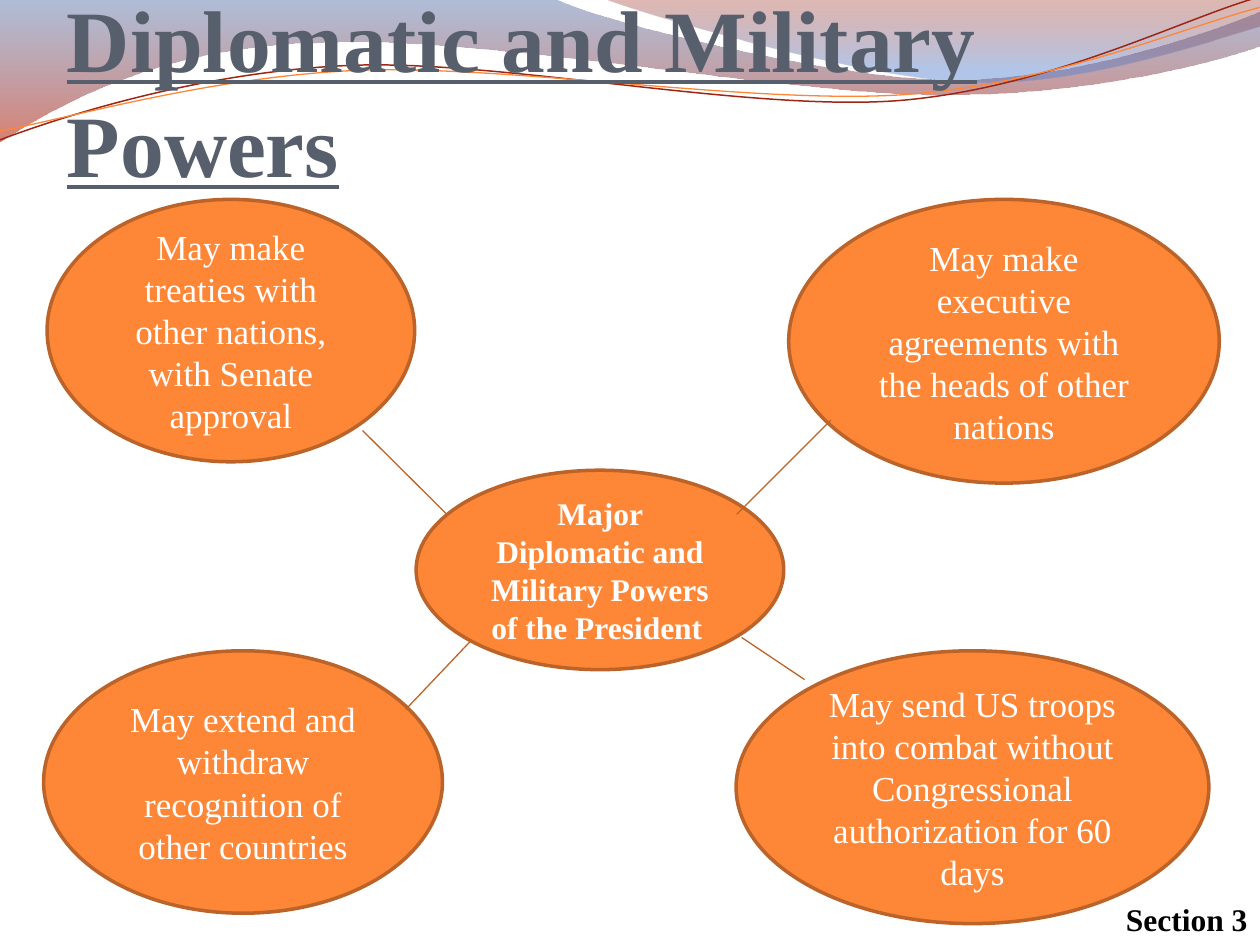
import pptx
import pptx.util
import pptx.dml.color
import pptx.enum.shapes
import pptx.enum.text
from lxml import etree

Cm = pptx.util.Cm
Pt = pptx.util.Pt
Align = pptx.enum.text.PP_ALIGN
Anchor = pptx.enum.text.MSO_ANCHOR
tag = pptx.oxml.ns.qn
FONT = "Times New Roman"
HUES = {
    "orange": "FE8637", "edge": "BC6329", "link": "BE6326",
    "slate": "575F6D", "white": "FFFFFF", "black": "000000",
    "blue": "4F6EA8", "red": "B61A00", "brick": "951500",
    "sky": "5681D1", "rust": "9E2713",
}
WAVES = [
    ([(0, -0.03), (11.18, -0.03),
      (12.09, 0.43, 16.87, 1.6, 19.25, 1.6),
      (21.67, 1.6, 24.33, 0.66, 25.4, 0.23), (25.43, 0.91),
      (24.97, 1.12, 22.1, 1.93, 18.95, 1.91),
      (15.8, 1.91, 9.7, 0.71, 6.53, 0.86),
      (3.28, 0.89, 1.17, 2.11, -0.03, 2.87), (0, -0.03)],
     [(0, "blue", 45), (1, "red", 55)]),
    ([(12.17, -0.03),
      (12.93, 0.28, 17.32, 1.57, 19.53, 1.65),
      (21.74, 1.75, 24.41, 0.81, 25.4, 0.53), (25.4, 0), (12.17, -0.03)],
     [(0, "brick", 30), (0.8, "sky", 45)]),
]
STRANDS = [
    ([(0, 2.82),
      (1.22, 2.36, 4.01, 1.45, 7.04, 1.32),
      (10.03, 1.19, 15.06, 2.26, 18.11, 2.03),
      (21.16, 1.78, 23.83, 0.38, 25.35, -0.05)], "rust", 0.85),
    ([(0, 2.64),
      (1.19, 2.44, 4.17, 1.55, 7.19, 1.42),
      (10.24, 1.3, 15.16, 2.11, 18.21, 1.91),
      (21.23, 1.7, 23.9, 0.53, 25.4, 0.15)], "orange", 0.75),
]
POWERS = [
    ((0.95, 4.02, 7.41, 5.29),
     "May make treaties with other nations, with Senate approval"),
    ((0.88, 13.12, 8.04, 5.29),
     "May extend and withdraw recognition of other countries"),
    ((15.9, 4.02, 8.68, 5.72),
     "May make executive agreements with the heads of other nations"),
    ((14.84, 13.12, 9.53, 5.5),
     "May send US troops into combat without Congressional authorization for 60 days"),
]
HUB = (8.39, 9.48, 7.41, 4.02)
LINKS = [
    (7.31, 8.68, 9.01, 10.37), (8.18, 14.3, 9.48, 12.93),
    (14.95, 12.85, 16.22, 13.7), (14.85, 10.37, 16.75, 8.47),
]


def hue(name):
    return pptx.dml.color.RGBColor.from_string(HUES[name])


def write(frame, text, size=20, color="white", bold=False, under=None,
          align=Align.CENTER, anchor=Anchor.MIDDLE, tail=None):
    frame.word_wrap = True
    frame.vertical_anchor = anchor
    line = frame.paragraphs[0]
    line.alignment = align
    parts = [(text, size)] + ([(" ", tail)] if tail else [])
    for words, points in parts:
        run = line.add_run()
        run.text = words
        font = run.font
        font.name, font.size, font.bold, font.underline = FONT, Pt(points), bold, under
        font.color.rgb = hue(color)


def bend(shape, steps):
    trail = next(shape._element.iter(tag("a:path")))
    nodes = iter(trail.findall(tag("a:lnTo")))
    for step in steps[1:]:
        node = next(nodes)
        if len(step) == 6:
            node.tag = tag("a:cubicBezTo")
            for other in (next(nodes), next(nodes)):
                node.append(other[0])
                trail.remove(other)


def curve(slide, box, steps, close=False):
    spots = [(Cm(box[0] + step[i]), Cm(box[1] + step[i + 1]))
             for step in steps for i in range(0, len(step), 2)]
    maker = slide.shapes.build_freeform(*spots[0])
    maker.add_line_segments(spots[1:], close=close)
    shape = maker.convert_to_shape()
    shape.shadow.inherit = False
    bend(shape, steps)
    return shape


def fade(shape, stops):
    shape.line.fill.background()
    shape.fill.gradient()
    shape.fill.gradient_angle = 270
    for stop, (place, name, alpha) in zip(shape.fill.gradient_stops, stops):
        stop.position = place
        stop.color.rgb = hue(name)
    tints = shape._element.spPr.iter(tag("a:srgbClr"))
    for tint, (place, name, alpha) in zip(tints, stops):
        etree.SubElement(tint, tag("a:alpha"), val=str(alpha * 1000))


def banner(slide, box):
    for steps, stops in WAVES:
        fade(curve(slide, box, steps, True), stops)
    for steps, name, width in STRANDS:
        shape = curve(slide, box, steps)
        shape.fill.background()
        shape.line.color.rgb = hue(name)
        shape.line.width = Pt(width)


def label(slide, box, text, **form):
    frame = slide.shapes.add_textbox(*map(Cm, box)).text_frame
    write(frame, text, **form)
    return frame


def title(slide, box):
    frame = label(slide, box, "Diplomatic and Military Powers", size=50,
                  color="slate", bold=True, under=True,
                  align=Align.LEFT, anchor=Anchor.BOTTOM)
    frame.margin_left = frame.margin_right = frame.margin_bottom = 0


def bubble(slide, box, text, **form):
    kind = pptx.enum.shapes.MSO_SHAPE.OVAL
    shape = slide.shapes.add_shape(kind, *map(Cm, box))
    shape.shadow.inherit = False
    shape.fill.solid()
    shape.fill.fore_color.rgb = hue("orange")
    shape.line.color.rgb = hue("edge")
    shape.line.width = Pt(2)
    write(shape.text_frame, text, **form)


def link(slide, ends):
    kind = pptx.enum.shapes.MSO_CONNECTOR.STRAIGHT
    line = slide.shapes.add_connector(kind, *map(Cm, ends))
    line.line.color.rgb = hue("link")
    line.line.width = Pt(0.75)
    etree.SubElement(line._element.spPr, tag("a:effectLst"))


def web(slide, box):
    def shift(x, y, *rest):
        return (box[0] + x, box[1] + y, *rest)

    for place, text in POWERS[:2]:
        bubble(slide, shift(*place), text)
    bubble(slide, shift(*HUB),
           "Major Diplomatic and Military Powers of the President",
           size=18, bold=True, tail=14)
    for place, text in POWERS[2:]:
        bubble(slide, shift(*place), text)
    for x, y, right, low in LINKS:
        link(slide, shift(x, y) + shift(right, low))


def main():
    deck = pptx.Presentation()
    deck.slide_width, deck.slide_height = Cm(25.4), Cm(19.05)
    slide = deck.slides.add_slide(deck.slide_layouts[6])
    banner(slide, (0, 0))
    title(slide, (1.35, 2.2, 23.7, 1.73))
    web(slide, (0, 0))
    label(slide, (22.43, 18.02, 2.97, 1.02), "Section 3", size=18,
          color="black", bold=True, align=Align.RIGHT, anchor=Anchor.TOP)
    deck.save("out.pptx")


if __name__ == "__main__":
    main()
